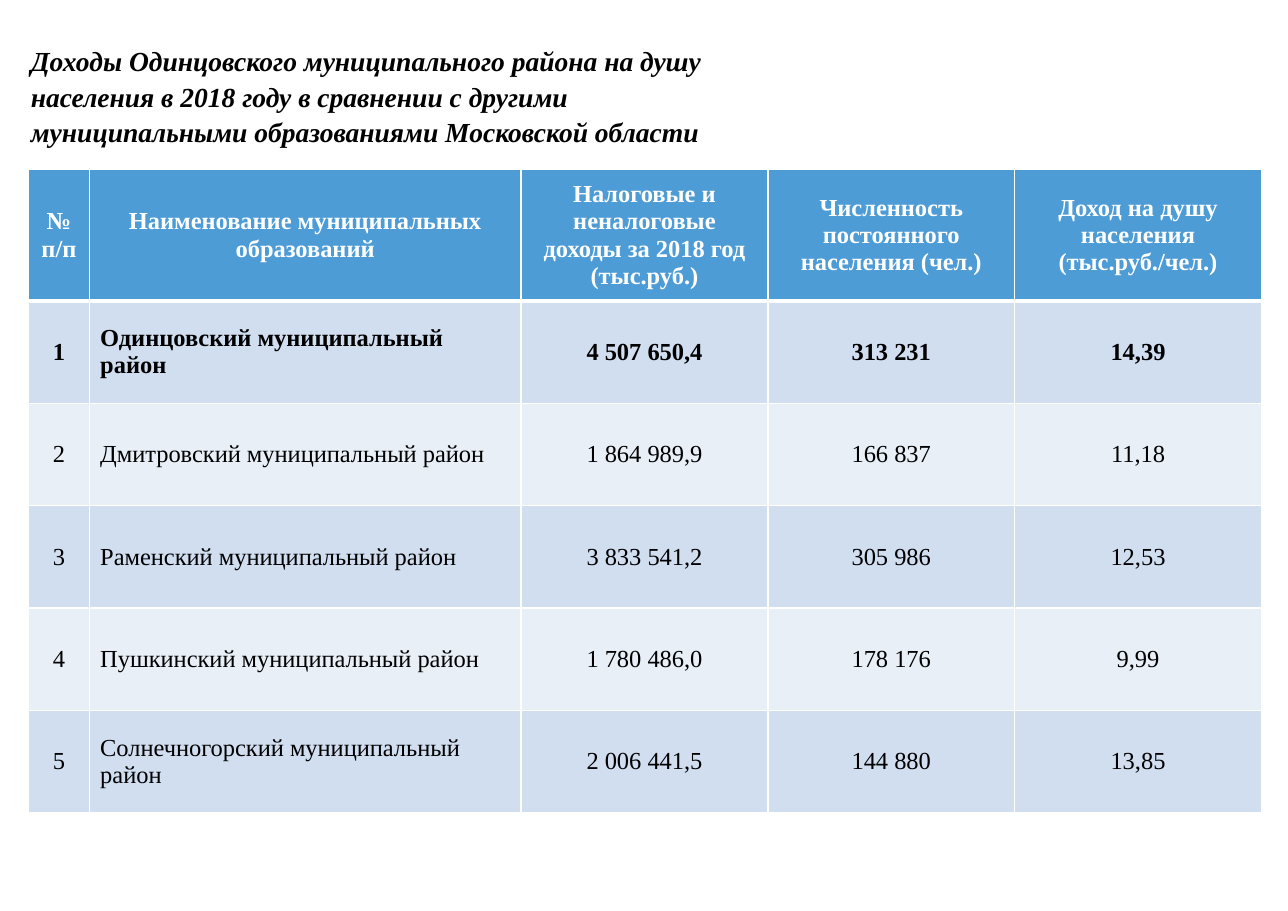
import pptx
import pptx.dml.color
import pptx.enum.text
import pptx.oxml
import pptx.oxml.ns
import pptx.util

Inches = pptx.util.Inches
Pt = pptx.util.Pt
RGBColor = pptx.dml.color.RGBColor
PP_ALIGN = pptx.enum.text.PP_ALIGN
MSO_ANCHOR = pptx.enum.text.MSO_ANCHOR

FONT = "Times New Roman"
BLACK = RGBColor(0x00, 0x00, 0x00)
WHITE = RGBColor(0xFF, 0xFF, 0xFF)
HEADER_BLUE = RGBColor(0x4E, 0x9C, 0xD6)
BAND_DARK = RGBColor(0xD0, 0xDE, 0xF0)
BAND_LIGHT = RGBColor(0xE9, 0xEF, 0xF7)

TITLE = ("Доходы Одинцовского муниципального района на душу населения в 2018 году "
         "в сравнении с другими муниципальными образованиями Московской области")
ROWS = [
    ("№ п/п", "Наименование муниципальных образований",
     "Налоговые и неналоговые доходы за 2018 год (тыс.руб.)",
     "Численность постоянного населения (чел.)",
     "Доход на душу населения (тыс.руб./чел.)"),
    ("1", "Одинцовский муниципальный район", "4 507 650,4", "313 231", "14,39"),
    ("2", "Дмитровский муниципальный район", "1 864 989,9", "166 837", "11,18"),
    ("3", "Раменский муниципальный район", "3 833 541,2", "305 986", "12,53"),
    ("4", "Пушкинский муниципальный район", "1 780 486,0", "178 176", "9,99"),
    ("5", "Солнечногорский муниципальный район", "2 006 441,5", "144 880", "13,85"),
]
COLUMN_WIDTHS = [0.55, 3.92] + [2.24] * 3
ROW_HEIGHTS = [1.19] + [0.93] * 5
NAME_COLUMN = 1


def style_font(paragraph, size, color, bold, italic=False):
    font = paragraph.font
    font.name, font.size = FONT, Pt(size)
    font.bold, font.italic = bold, italic
    font.color.rgb = color


def set_borders(cell, widths):
    """Draw white borders; widths maps a side (L, R, T, B) to points."""
    properties = cell._tc.get_or_add_tcPr()
    for index, (side, width) in enumerate(widths.items()):
        properties.insert(index, pptx.oxml.parse_xml(
            f'<a:ln{side} {pptx.oxml.ns.nsdecls("a")} w="{Pt(width)}">'
            f'<a:solidFill><a:srgbClr val="{WHITE}"/></a:solidFill></a:ln{side}>'))


presentation = pptx.Presentation()
presentation.slide_width = Inches(11.69)
presentation.slide_height = Inches(8.27)
slide = presentation.slides.add_slide(presentation.slide_layouts[5])

# Title
title = slide.shapes.title
title.left, title.top = Inches(0.18), Inches(0.35)
title.width, title.height = Inches(7.01), Inches(1.02)
title.text_frame.text = TITLE
title.text_frame.word_wrap = True
title.text_frame.auto_size = pptx.enum.text.MSO_AUTO_SIZE.NONE
title.text_frame.vertical_anchor = MSO_ANCHOR.MIDDLE
paragraph = title.text_frame.paragraphs[0]
paragraph.alignment = PP_ALIGN.LEFT
paragraph.line_spacing = 1.08
style_font(paragraph, 18, BLACK, bold=True, italic=True)

# Table grid
table = slide.shapes.add_table(
    len(ROWS), len(COLUMN_WIDTHS), Inches(0.26), Inches(1.54),
    Inches(sum(COLUMN_WIDTHS)), Inches(sum(ROW_HEIGHTS))).table
for column, width in zip(table.columns, COLUMN_WIDTHS):
    column.width = Inches(width)
for row, height in zip(table.rows, ROW_HEIGHTS):
    row.height = Inches(height)

# Table cells: header, highlighted first district, then banded rows
for row_index, values in enumerate(ROWS):
    is_header = row_index == 0
    band = BAND_DARK if row_index % 2 else BAND_LIGHT
    for column_index, value in enumerate(values):
        cell = table.cell(row_index, column_index)
        cell.text = value
        cell.vertical_anchor = MSO_ANCHOR.MIDDLE
        cell.fill.solid()
        cell.fill.fore_color.rgb = HEADER_BLUE if is_header else band
        set_borders(cell, {"L": 1, "R": 1, "T": 3 if row_index == 1 else 1,
                           "B": 3 if is_header else 1})
        paragraph = cell.text_frame.paragraphs[0]
        is_name = column_index == NAME_COLUMN and not is_header
        paragraph.alignment = PP_ALIGN.LEFT if is_name else PP_ALIGN.CENTER
        style_font(paragraph, 16, WHITE if is_header else BLACK, bold=row_index < 2)

presentation.save("out.pptx")
